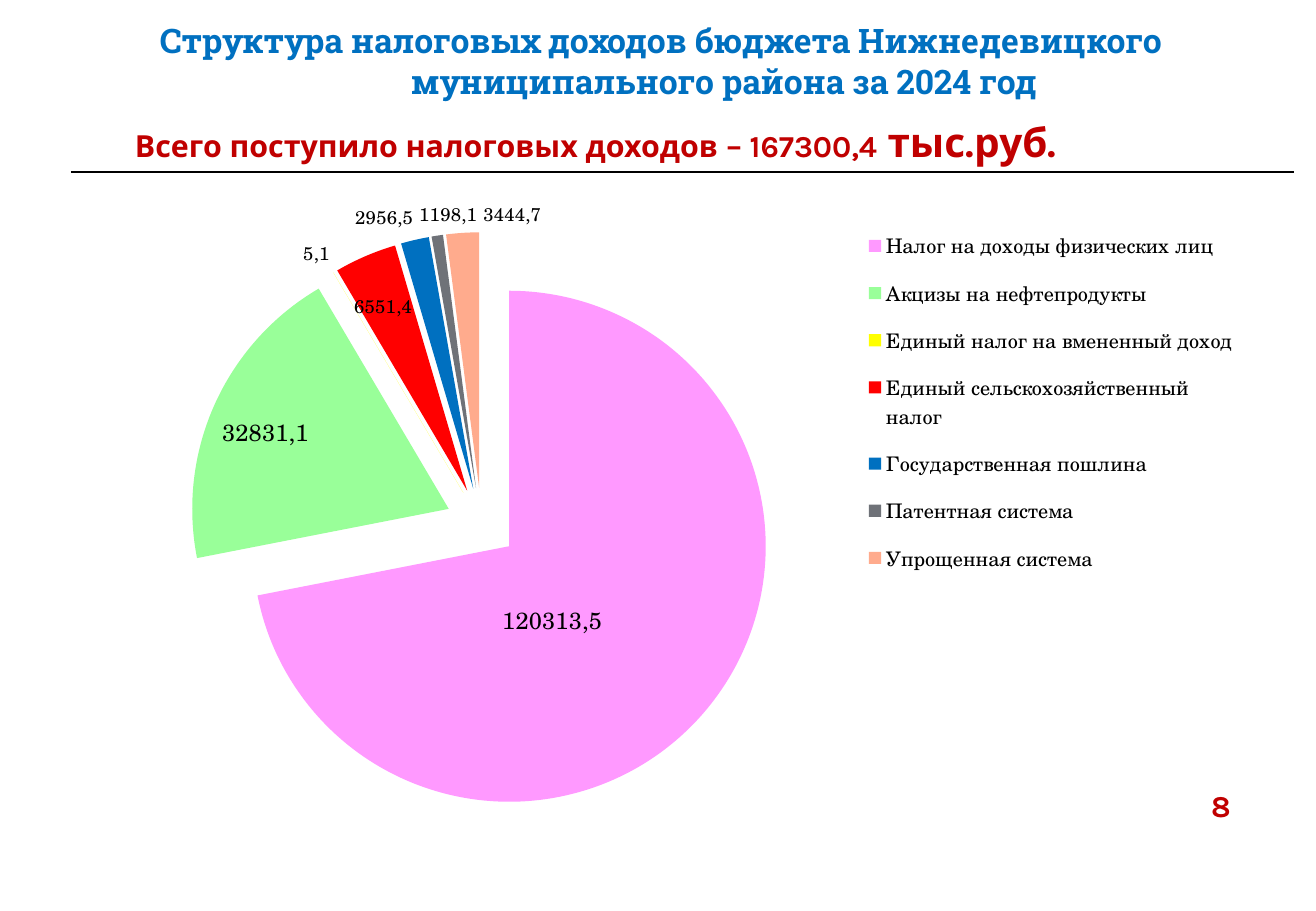
from pptx import Presentation, util as u
from pptx.chart.data import CategoryChartData
from pptx.dml.color import RGBColor
from pptx.enum import chart as ch, text
from pptx.oxml import parse_xml
from pptx.oxml.ns import nsdecls, qn

# Content
TITLE = "Структура налоговых доходов бюджета Нижнедевицкого муниципального района за 2024 год"
# words, size, letter spacing
TOTAL = [("Всего поступило налоговых доходов – 167300,4", 18, 0),
         (" тыс", 24, 0), (".", 24, -10), ("руб.", 24, 0)]
PAGE = "8"
CENTER, OUTSIDE = ch.XL_LABEL_POSITION.CENTER, ch.XL_LABEL_POSITION.OUTSIDE_END
# name, value, colour, label size, label position, label shift in px
TAXES = [
    ("Налог на доходы физических лиц", 120313.5, "FF99FF", 14, CENTER, (-56, -8)),
    ("Акцизы на нефтепродукты", 32831.1, "99FF99", 14, CENTER, (-66, -25)),
    ("Единый налог на вмененный доход", 5.1, "FFFF00", 11, OUTSIDE, (0, 0)),
    ("Единый сельскохозяйственный налог", 6551.4, "FF0000", 11, CENTER, (-33, -68)),
    ("Государственная пошлина", 2956.5, "0070C0", 11, OUTSIDE, (0, -2)),
    ("Патентная система", 1198.1, "6F7278", 11, OUTSIDE, (41, -7)),
    ("Упрощенная система", 3444.7, "FFAB8D", 11, OUTSIDE, (50, -5)),
]
CHART_W, CHART_H = 1142, 617
EXPLOSION = 14
BLUE, RED, BLACK = "0070C0", "C00000", "000000"
SERIF = "TeX Gyre Schola"


def px(n):
    return u.Emu(round(n * 914400 / 121.5))


def rgb(value):
    return RGBColor.from_string(value)


def style(font, size, name, color, bold=False):
    font.size, font.name, font.bold = u.Pt(size), name, bold
    font.color.rgb = rgb(color)


def setup(sp, anchor, margins):
    tf = sp.text_frame
    tf.word_wrap = True
    tf.auto_size = text.MSO_AUTO_SIZE.NONE
    tf.vertical_anchor = anchor
    tf.margin_left, tf.margin_top, tf.margin_right, tf.margin_bottom = map(px, margins)
    return tf.paragraphs[0]


def indent(p, left, first):
    pPr = p._p.get_or_add_pPr()
    pPr.set("marL", str(px(left)))
    pPr.set("indent", str(px(first)))


def add_run(p, words, size, name, color, spacing):
    r = p.add_run()
    r.text = words
    style(r.font, size, name, color, True)
    r._r.get_or_add_rPr().set("spc", str(spacing))


def layout(x, y, w=None, h=None, inner=False):
    parts = '<c:layoutTarget val="inner"/>' if inner else ""
    if w:
        parts += '<c:xMode val="edge"/><c:yMode val="edge"/>'
    for tag, value in zip("xywh", (x, y, w, h)):
        if value is not None:
            parts += f'<c:{tag} val="{value:.3f}"/>'
    return parse_xml(f'<c:layout {nsdecls("c")}><c:manualLayout>{parts}'
                     '</c:manualLayout></c:layout>')


def place(parent, new, after=None):
    for old in parent.findall(qn("c:layout")):
        parent.remove(old)
    if after is None:
        parent.insert(0, new)
    else:
        parent.find(qn(after)).addnext(new)


prs = Presentation()
prs.slide_width, prs.slide_height = px(1316), px(911)
s = prs.slides.add_slide(prs.slide_layouts[5])

# Rule under the heading
outline = s.shapes.build_freeform(px(71), px(172))
outline.add_line_segments([(px(1294), px(172))], close=False)
rule = outline.convert_to_shape()
rule.height = px(36)
rule.shadow.inherit = False
rule.fill.background()
rule.line.color.rgb = rgb(BLACK)
rule.line.width = u.Pt(1.35)

# Title
title = s.shapes.title
title.left, title.top, title.width, title.height = map(px, (21, 20, 1276, 82))
p = setup(title, text.MSO_ANCHOR.TOP, (0, 0, 0, 0))
p.alignment = text.PP_ALIGN.CENTER
indent(p, 129, -126)
add_run(p, TITLE, 20, "Roboto Slab", BLUE, -10)

# Total and page number
total = s.shapes.add_textbox(*map(px, (122, 111, 1164, 61)))
p = setup(total, text.MSO_ANCHOR.TOP, (12, 6, 12, 6))
indent(p, 1, 0)
for words, size, spacing in TOTAL:
    add_run(p, words, size, "Karla", RED, spacing)

page = s.shapes.add_textbox(*map(px, (1170, 762, 87, 69)))
p = setup(page, text.MSO_ANCHOR.MIDDLE, (0, 18, 0, 0))
p.alignment = text.PP_ALIGN.CENTER
indent(p, 15, 0)
add_run(p, PAGE, 18, "Karla", RED, -10)

# Pie chart
data = CategoryChartData(number_format="0.0")
data.categories = [tax[0] for tax in TAXES]
data.add_series("Налоговые доходы", [tax[1] for tax in TAXES])
chart = s.shapes.add_chart(ch.XL_CHART_TYPE.PIE, px(103), px(198),
                           px(CHART_W), px(CHART_H), data).chart
chart.has_title = False
style(chart.font, 18, SERIF, BLACK)
chart.has_legend = True
legend = chart.legend
legend.position = ch.XL_LEGEND_POSITION.RIGHT
legend.include_in_layout = False
style(legend.font, 12, SERIF, BLACK)
place(legend._element, layout(0.667, 0.021, 0.326, 0.614), "c:legendPos")
place(chart._chartSpace.chart.plotArea, layout(0.001, 0.052, 0.661, 0.948, True))

plot = chart.plots[0]
plot.vary_by_categories = True
series = plot.series[0]

# Slices and their labels
for i, (name, value, color, size, position, (dx, dy)) in enumerate(TAXES):
    point = series.points[i]
    point.format.fill.solid()
    point.format.fill.fore_color.rgb = rgb(color)
    point.format.line.fill.background()
    label = point.data_label
    r = label.text_frame.paragraphs[0].add_run()
    r.text = f"{value:.1f}".replace(".", ",")
    style(r.font, size, SERIF, BLACK)
    label.position = position
    place(label._dLbl, layout(dx / CHART_W, dy / CHART_H), "c:idx")

explosion = parse_xml(f'<c:explosion {nsdecls("c")} val="{EXPLOSION}"/>')
series._element.find(qn("c:dPt")).addprevious(explosion)
labels = series.data_labels
labels.show_value = True
style(labels.font, 14, SERIF, BLACK)
for leader in series._element.iter(qn("c:showLeaderLines")):
    leader.set("val", "0")

prs.save("out.pptx")
